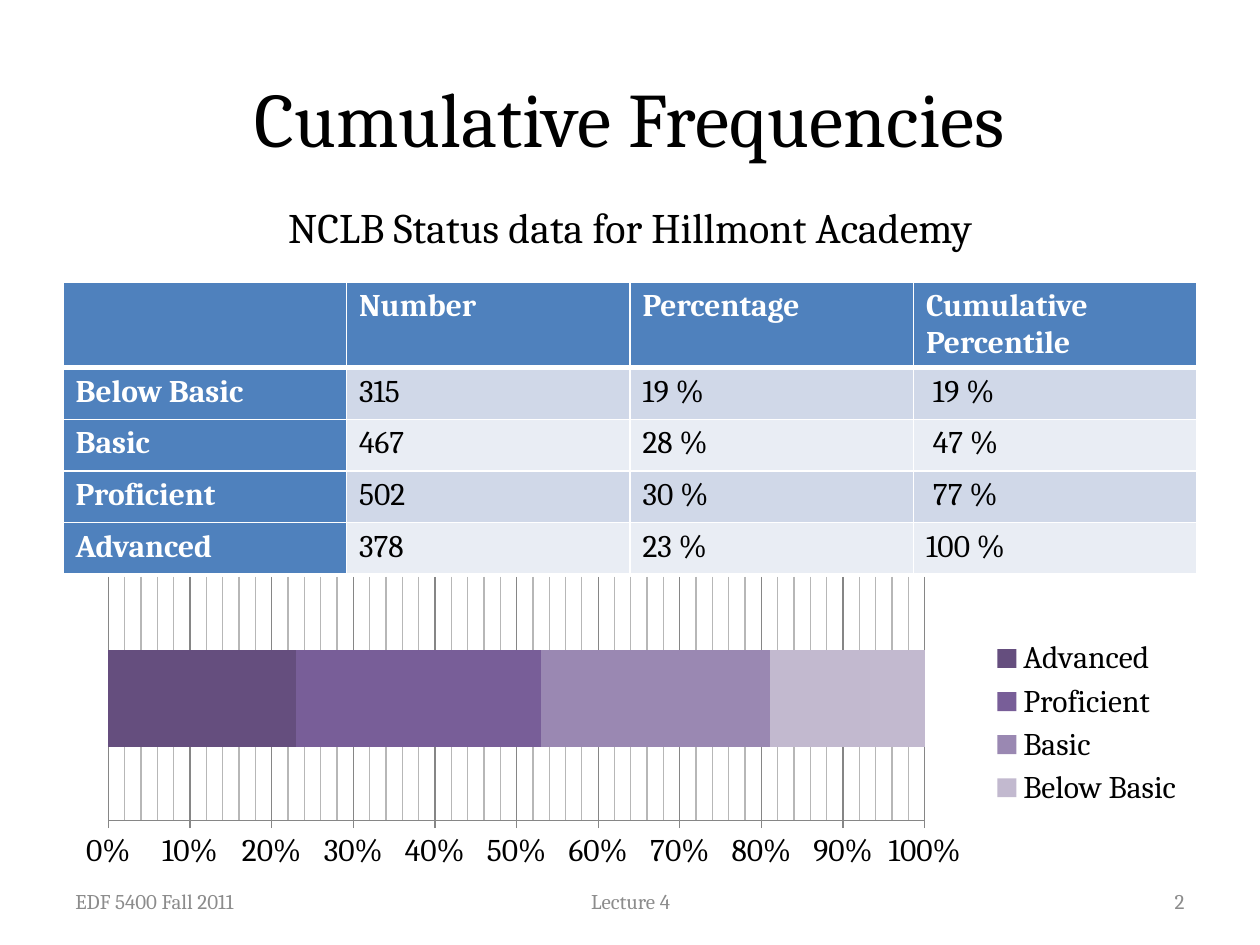
from dataclasses import dataclass

from pptx import Presentation
from pptx.chart.data import CategoryChartData
from pptx.dml.color import RGBColor
from pptx.enum.chart import XL_CHART_TYPE, XL_LEGEND_POSITION, XL_TICK_MARK
from pptx.enum.text import MSO_ANCHOR, PP_ALIGN
from pptx.oxml import parse_xml
from pptx.oxml.ns import nsdecls, qn
from pptx.util import Inches, Pt

LEFT, CENTER, RIGHT = PP_ALIGN.LEFT, PP_ALIGN.CENTER, PP_ALIGN.RIGHT
TOP, MIDDLE = MSO_ANCHOR.TOP, MSO_ANCHOR.MIDDLE
BAR_STACKED_100 = XL_CHART_TYPE.BAR_STACKED_100
LEGEND_RIGHT = XL_LEGEND_POSITION.RIGHT
TICK_OUT, TICK_NONE = XL_TICK_MARK.OUTSIDE, XL_TICK_MARK.NONE

FONT = "Cambria"
BLACK, WHITE, GREY = "000000", "FFFFFF", "8C8C8C"
HEAD, BANDS = "4F81BD", ("D0D8E8", "E9EDF4")
GRID, MINOR_GRID = "868686", "B7B7B7"
MARGIN, WIDTH = 0.5, 9
HEAD_H, ROW_H = 0.67, 0.41


@dataclass
class Label:
    text: str
    x: float
    y: float
    w: float
    h: float
    size: int
    color: str = BLACK
    align: PP_ALIGN = CENTER
    anchor: MSO_ANCHOR = MIDDLE


@dataclass
class Status:
    name: str
    number: int
    percent: int
    cumulative: str
    color: str


LABELS = [
    Label("Cumulative Frequencies", MARGIN, 0.3, WIDTH, 1.25, 44),
    Label("NCLB Status data for Hillmont Academy", MARGIN, 1.55, WIDTH, 0.5, 24, anchor=TOP),
    Label("EDF 5400 Fall 2011", MARGIN, 6.95, 2.33, 0.4, 12, GREY, LEFT),
    Label("Lecture 4", 3.42, 6.95, 3.17, 0.4, 12, GREY),
    Label("2", 7.17, 6.95, 2.33, 0.4, 12, GREY, RIGHT),
]
HEADERS = ["", "Number", "Percentage", "Cumulative\nPercentile"]
STATUSES = [
    Status("Below Basic", 315, 19, " 19 %", "C2B9CF"),
    Status("Basic", 467, 28, " 47 %", "9A88B2"),
    Status("Proficient", 502, 30, " 77 %", "785E98"),
    Status("Advanced", 378, 23, "100 %", "654E7E"),
]


def rgb(color: str) -> RGBColor:
    return RGBColor.from_string(color)


def style_font(font, size: int, color: str, bold: bool = False) -> None:
    font.name, font.size, font.bold = FONT, Pt(size), bold
    font.color.rgb = rgb(color)


def write(tf, text: str, size: int, color: str, bold: bool = False, align=LEFT) -> None:
    for i, line in enumerate(text.split("\n")):
        p = tf.add_paragraph() if i else tf.paragraphs[0]
        p.alignment = align
        r = p.add_run()
        r.text = line
        style_font(r.font, size, color, bold)


def add_label(s, label: Label) -> None:
    box = map(Inches, (label.x, label.y, label.w, label.h))
    tf = s.shapes.add_textbox(*box).text_frame
    tf.word_wrap = True
    tf.vertical_anchor = label.anchor
    write(tf, label.text, label.size, label.color, align=label.align)


def solid_line(tag: str, pt: float, color: str) -> str:
    return (f'<a:{tag} {nsdecls("a")} w="{Pt(pt)}"><a:solidFill>'
            f'<a:srgbClr val="{color}"/></a:solidFill></a:{tag}>')


def set_borders(cell, bottom: int) -> None:
    tc_pr = cell._tc.get_or_add_tcPr()
    for i, (side, pt) in enumerate(zip("LRTB", (1, 1, 1, bottom))):
        tc_pr.insert(i, parse_xml(solid_line(f"ln{side}", pt, WHITE)))


def add_table(s) -> None:
    rows = [HEADERS] + [[st.name, str(st.number), f"{st.percent} %", st.cumulative]
                        for st in STATUSES]
    height = HEAD_H + ROW_H * len(STATUSES)
    table = s.shapes.add_table(len(rows), len(HEADERS), Inches(MARGIN), Inches(2.24),
                               Inches(WIDTH), Inches(height)).table
    for i, row in enumerate(rows):
        table.rows[i].height = Inches(ROW_H if i else HEAD_H)
        for j, text in enumerate(row):
            is_head = i == 0 or j == 0
            cell = table.cell(i, j)
            cell.fill.solid()
            cell.fill.fore_color.rgb = rgb(HEAD if is_head else BANDS[(i - 1) % 2])
            set_borders(cell, bottom=1 if i else 3)
            if text:
                write(cell.text_frame, text, 18, WHITE if is_head else BLACK, is_head)


def set_plot_layout(chart, **shares: float) -> None:
    """Fix the inner plot area, in shares of the chart's size."""
    area = chart._chartSpace.chart.plotArea
    for old in area.findall(qn("c:layout")):
        area.remove(old)
    sizes = "".join(f'<c:{k} val="{v}"/>' for k, v in shares.items())
    area.insert(0, parse_xml(
        f'<c:layout {nsdecls("c")}><c:manualLayout><c:layoutTarget val="inner"/>'
        f'<c:xMode val="edge"/><c:yMode val="edge"/>{sizes}</c:manualLayout></c:layout>'))


def style_line(line, color: str) -> None:
    line.color.rgb = rgb(color)
    line.width = Pt(0.75)


def add_chart(s) -> None:
    parts = STATUSES[::-1]
    data = CategoryChartData()
    data.categories = ["1"]
    for st in parts:
        data.add_series(st.name, [st.percent])
    chart = s.shapes.add_chart(BAR_STACKED_100, Inches(MARGIN), Inches(4.53),
                               Inches(WIDTH), Inches(2.42), data).chart
    style_font(chart.font, 18, BLACK)
    chart.has_title = False
    chart.has_legend = True
    chart.legend.position = LEGEND_RIGHT
    chart.legend.include_in_layout = False
    set_plot_layout(chart, x=0.04, y=0.02, w=0.72, h=0.8)

    # Bars
    plot = chart.plots[0]
    plot.gap_width, plot.overlap, plot.vary_by_categories = 150, 100, False
    for series, st in zip(plot.series, parts):
        series.format.fill.solid()
        series.format.fill.fore_color.rgb = rgb(st.color)

    # Axes
    chart.category_axis.visible = False
    axis = chart.value_axis
    axis.major_unit, axis.minor_unit = 0.1, 0.02
    axis.major_tick_mark, axis.minor_tick_mark = TICK_OUT, TICK_NONE
    axis.tick_labels.number_format = "0%"
    axis.tick_labels.number_format_is_linked = False
    axis.has_major_gridlines = axis.has_minor_gridlines = True
    style_line(axis.format.line, GRID)
    style_line(axis.major_gridlines.format.line, GRID)
    minor = axis._element.find(qn("c:minorGridlines"))
    minor.append(parse_xml(f'<c:spPr {nsdecls("c")}>'
                           f'{solid_line("ln", 0.75, MINOR_GRID)}</c:spPr>'))


def main() -> None:
    prs = Presentation()
    prs.slide_width, prs.slide_height = Inches(10), Inches(7.5)
    s = prs.slides.add_slide(prs.slide_layouts[6])
    add_table(s)
    add_chart(s)
    for label in LABELS:
        add_label(s, label)
    prs.save("out.pptx")


if __name__ == "__main__":
    main()
